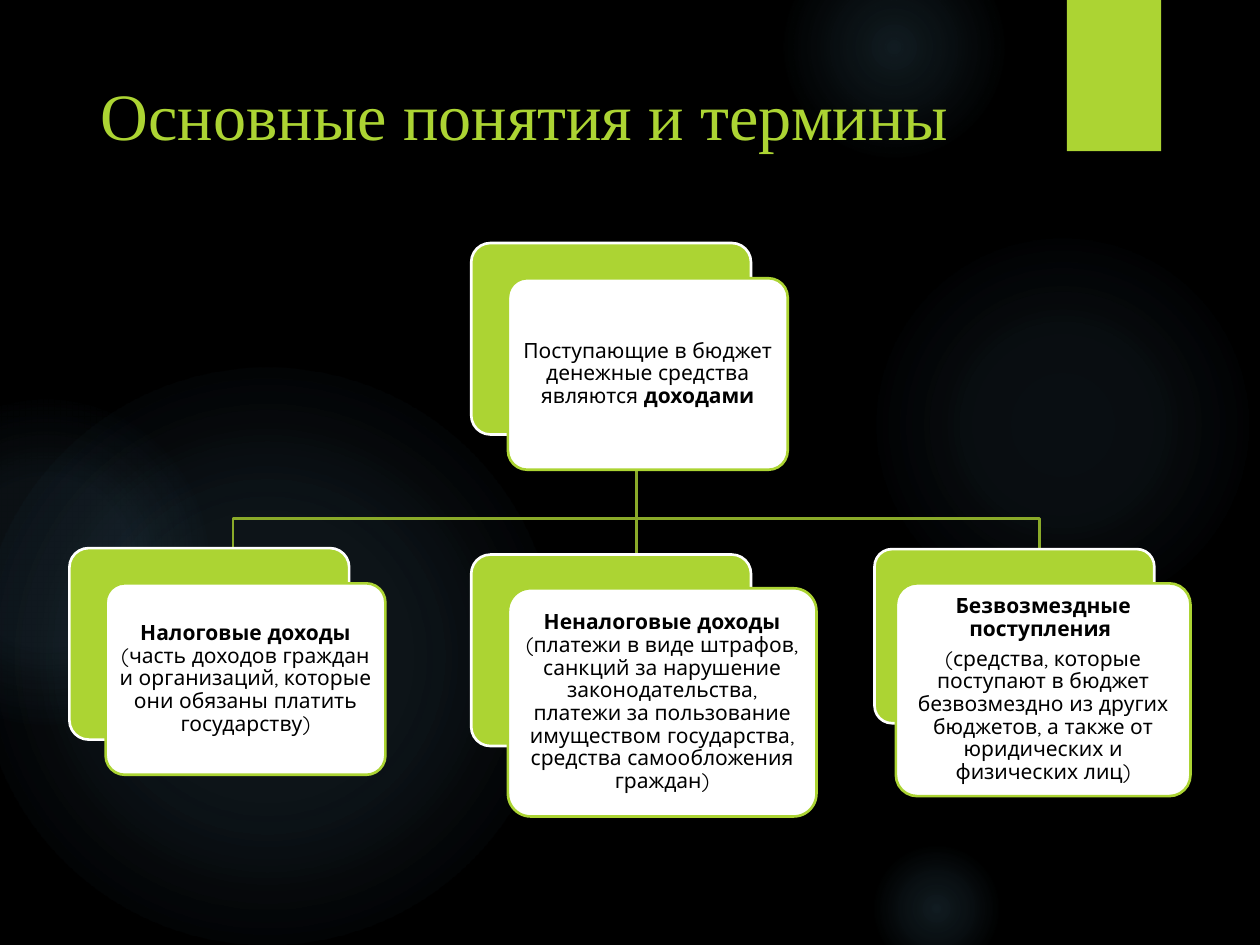
from dataclasses import dataclass

from lxml.etree import SubElement
from pptx import Presentation
from pptx.dml.color import RGBColor
from pptx.enum.shapes import MSO_CONNECTOR, MSO_SHAPE
from pptx.enum.text import MSO_ANCHOR, MSO_AUTO_SIZE, PP_ALIGN
from pptx.oxml import parse_xml
from pptx.oxml.ns import nsdecls, qn
from pptx.util import Cm, Pt


@dataclass(frozen=True)
class Theme:
    background: RGBColor = RGBColor.from_string("000000")
    accent: RGBColor = RGBColor.from_string("ACD433")
    branch: RGBColor = RGBColor.from_string("8AAA29")
    paper: RGBColor = RGBColor.from_string("FFFFFF")
    ink: RGBColor = RGBColor.from_string("000000")
    glow: str = "7AC4F0"
    title_font: str = "Times New Roman"
    body_font: str = "Quicksand"
    title_size: Pt = Pt(37.8)
    body_size: Pt = Pt(12)
    line_width: Pt = Pt(1.5)


class SlideBuilder:
    def __init__(self, slide, theme):
        self.slide = slide
        self.theme = theme
        slide.background.fill.solid()
        slide.background.fill.fore_color.rgb = theme.background

    def shape(self, kind, box, fill, line=None):
        part = self.slide.shapes.add_shape(kind, *(Cm(v) for v in box))
        part.shadow.inherit = False
        part.fill.solid()
        part.fill.fore_color.rgb = fill
        if line is None:
            part.line.fill.background()
        else:
            part.line.color.rgb = line
            part.line.width = self.theme.line_width
        return part

    def glow(self, left, top, diameter, stops):
        """Circle fading out from its centre; stops are (position %, opacity %)."""
        circle = self.shape(MSO_SHAPE.OVAL, (left, top, diameter, diameter), self.theme.accent)
        stop_xml = "".join(
            f'<a:gs pos="{position * 1000}"><a:srgbClr val="{self.theme.glow}">'
            f'<a:alpha val="{opacity * 1000}"/></a:srgbClr></a:gs>'
            for position, opacity in stops
        )
        gradient = parse_xml(
            f'<a:gradFill {nsdecls("a")}><a:gsLst>{stop_xml}</a:gsLst><a:path path="circle">'
            '<a:fillToRect l="50000" t="50000" r="50000" b="50000"/></a:path></a:gradFill>'
        )
        properties = circle._element.spPr
        properties.replace(properties.find(qn("a:solidFill")), gradient)

    def title(self, text, box):
        heading = self.slide.shapes.title
        heading.left, heading.top, heading.width, heading.height = (Cm(v) for v in box)
        frame = heading.text_frame
        frame.text = text
        frame.auto_size = MSO_AUTO_SIZE.NONE
        frame.vertical_anchor = MSO_ANCHOR.MIDDLE
        paragraph = frame.paragraphs[0]
        paragraph.alignment = PP_ALIGN.LEFT
        paragraph.font.name = self.theme.title_font
        paragraph.font.size = self.theme.title_size
        paragraph.font.color.rgb = self.theme.accent
        # Keep the heading in front of the backdrop
        self.slide.shapes._spTree.append(heading._element)

    def stem(self, x, top, bottom):
        line = self.slide.shapes.add_connector(
            MSO_CONNECTOR.STRAIGHT, Cm(x), Cm(top), Cm(x), Cm(bottom))
        line.line.color.rgb = self.theme.branch
        line.line.width = self.theme.line_width
        SubElement(line._element.spPr, qn("a:effectLst"))

    def branch(self, points):
        start, *rest = [(Cm(x), Cm(y)) for x, y in points]
        outline = self.slide.shapes.build_freeform(*start)
        outline.add_line_segments(rest, close=False)
        elbow = outline.convert_to_shape()
        elbow.shadow.inherit = False
        elbow.fill.background()
        elbow.line.color.rgb = self.theme.branch
        elbow.line.width = self.theme.line_width

    def card(self, back_box, front_box, paragraphs):
        """Green plate with a white card on it; paragraphs hold (text, bold) runs."""
        theme = self.theme
        plate = self.shape(MSO_SHAPE.ROUNDED_RECTANGLE, back_box, theme.accent, theme.paper)
        front = self.shape(MSO_SHAPE.ROUNDED_RECTANGLE, front_box, theme.paper, theme.accent)
        plate.adjustments[0] = front.adjustments[0] = 0.1
        frame = front.text_frame
        frame.word_wrap = True
        frame.vertical_anchor = MSO_ANCHOR.MIDDLE
        frame.margin_left = frame.margin_right = Cm(0.13)
        frame.margin_top = frame.margin_bottom = Cm(0.13)
        for index, runs in enumerate(paragraphs):
            paragraph = frame.add_paragraph() if index else frame.paragraphs[0]
            paragraph.alignment = PP_ALIGN.CENTER
            paragraph.line_spacing = 0.9
            paragraph.space_after = Pt(4.2)
            paragraph.font.name = theme.body_font
            paragraph.font.size = theme.body_size
            paragraph.font.color.rgb = theme.ink
            for text, bold in runs:
                run = paragraph.add_run()
                run.text = text
                run.font.bold = bold


GLOWS = [
    (17.5, 4.65, 7.82, [(0, 7), (36, 6), (69, 0)]),
    (15.8, -1.27, 4.45, [(0, 14), (36, 7), (73, 0)]),
    (17.5, 16.94, 2.74, [(0, 14), (36, 7), (66, 0)]),
    (-0.43, 7.42, 11.63, [(0, 11), (36, 10), (75, 0)]),
    (-2.34, 8.05, 6.55, [(0, 8), (36, 8), (72, 0)]),
]

PLATE = (5.64, 3.86)
CARDS = [
    ((9.5, 4.9, *PLATE), (10.24, 5.61, *PLATE), [
        [("Поступающие в бюджет денежные средства являются ", False), ("доходами", True)],
    ]),
    ((1.4, 11.05, *PLATE), (2.13, 11.76, *PLATE), [
        [("Налоговые доходы ", True),
         ("(часть доходов граждан и организаций, которые они обязаны платить "
          "государству)", False)],
    ]),
    ((9.5, 11.18, *PLATE), (10.24, 11.86, 6.22, 4.6), [
        [("Неналоговые доходы ", True),
         ("(платежи в виде штрафов, санкций за нарушение законодательства, платежи "
          "за пользование имуществом государства, средства самообложения граждан)", False)],
    ]),
    ((17.63, 11.07, 5.64, 3.51), (18.06, 11.76, 5.94, 4.29), [
        [("Безвозмездные поступления ", True)],
        [("(средства, которые поступают в бюджет безвозмездно из других бюджетов, "
          "а также от юридических и физических лиц)", False)],
    ]),
]


def main():
    presentation = Presentation()
    presentation.slide_width, presentation.slide_height = Cm(25.4), Cm(19.05)
    theme = Theme()
    builder = SlideBuilder(presentation.slides.add_slide(presentation.slide_layouts[5]), theme)

    # Backdrop
    for glow in GLOWS:
        builder.glow(*glow)
    builder.shape(MSO_SHAPE.RECTANGLE, (21.51, 0, 1.9, 3.05), theme.accent)

    builder.title("Основные понятия и термины", (1.78, 1.4, 22.73, 1.78))

    # Branches from the root card to the three kinds of income
    trunk_x, trunk_top, fork_y, reach = 12.83, 9.12, 10.45, 8.13
    for end_x in (trunk_x + reach, trunk_x - reach):
        builder.branch([(trunk_x, trunk_top), (trunk_x, fork_y), (end_x, fork_y), (end_x, 11.07)])
    builder.stem(trunk_x, trunk_top, 11.18)

    # Cards
    for card in CARDS:
        builder.card(*card)

    presentation.save("out.pptx")


if __name__ == "__main__":
    main()
